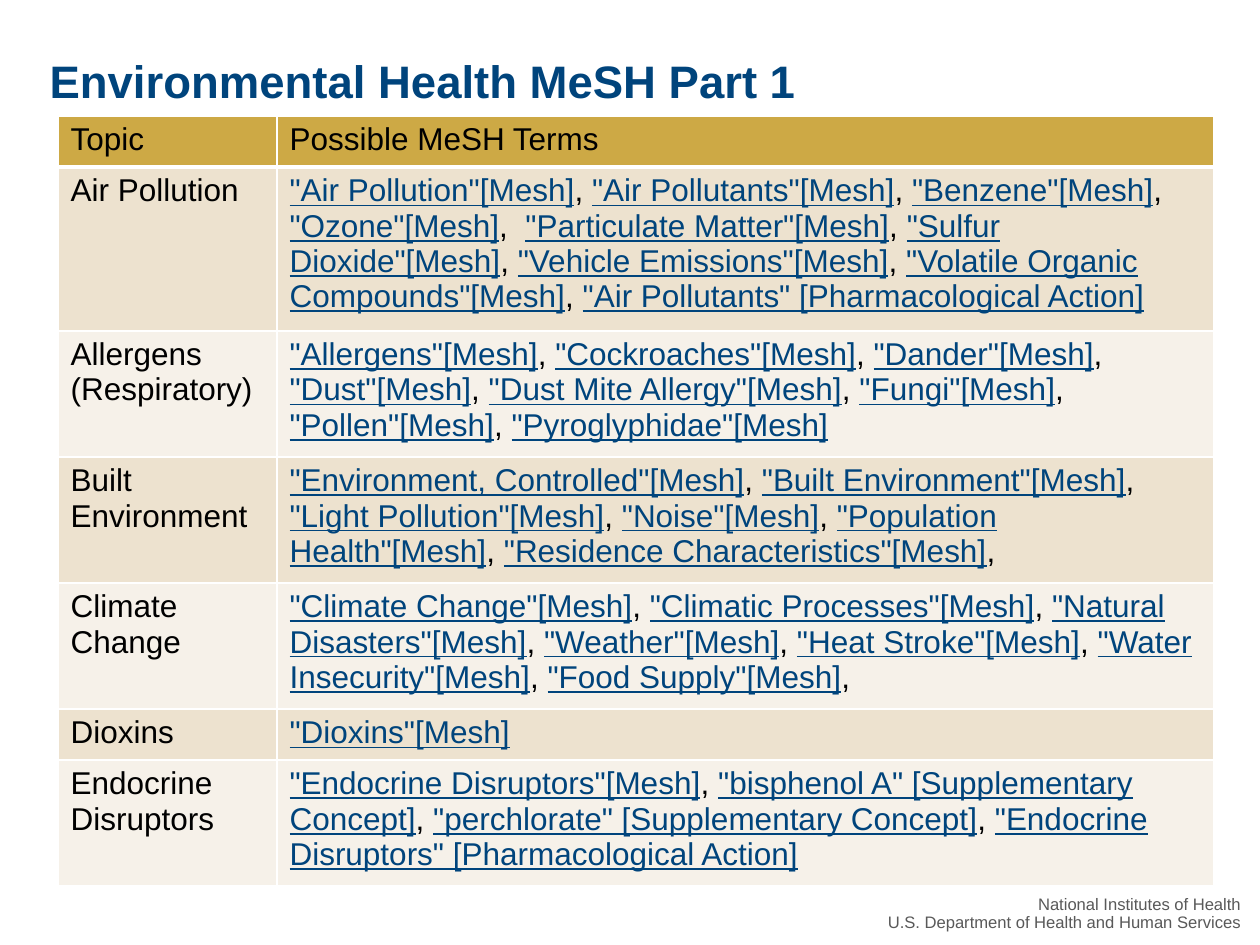
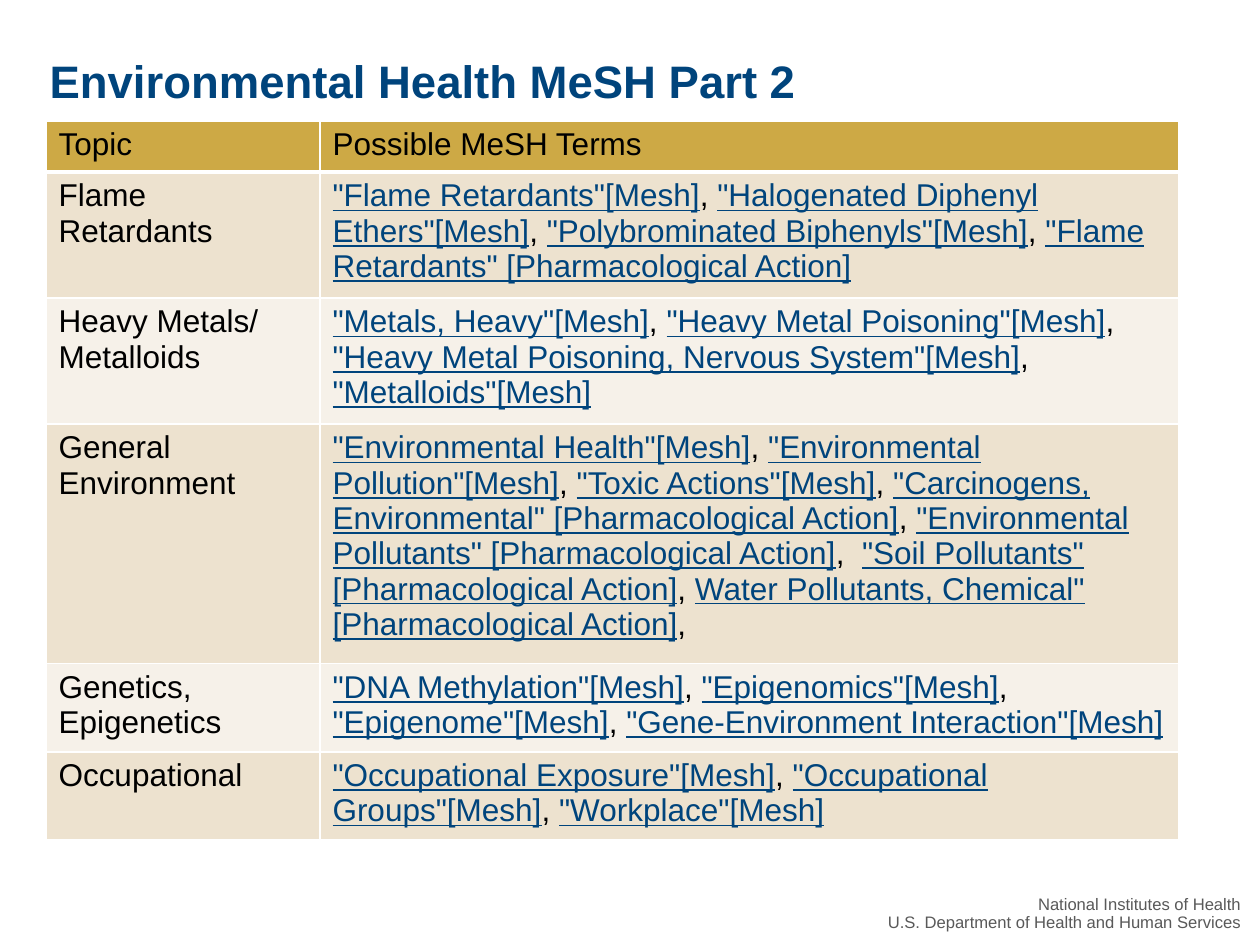
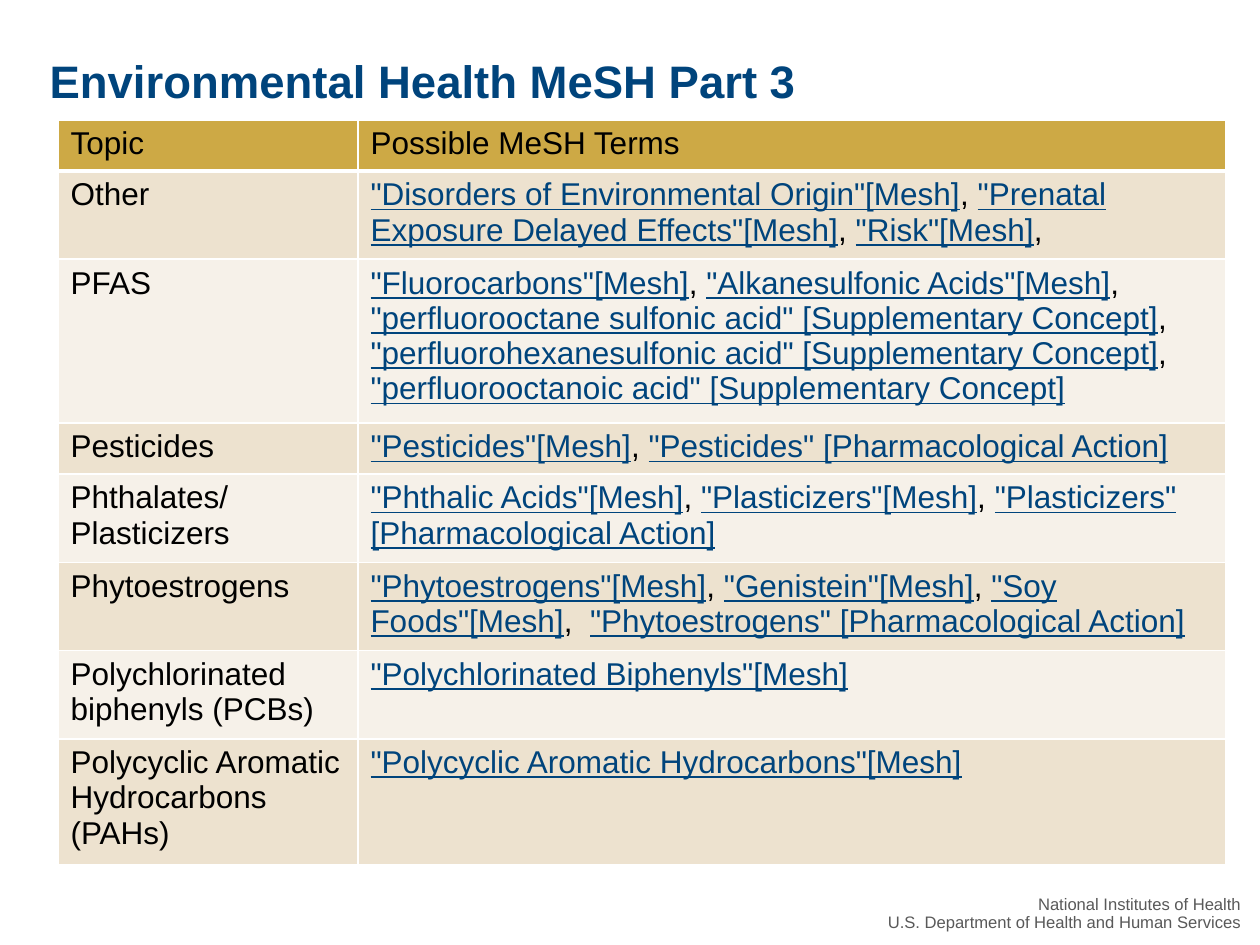
from dataclasses import dataclass

from lxml.etree import SubElement
from pptx import Presentation
from pptx.dml.color import RGBColor
from pptx.enum.text import MSO_ANCHOR, MSO_AUTO_SIZE, PP_ALIGN
from pptx.oxml.ns import qn
from pptx.util import Emu, Pt


@dataclass(frozen=True)
class Theme:
    """Colours, type sizes and line widths shared by the slides."""

    font: str = "Arial"
    navy: str = "00447C"
    black: str = "000000"
    grey: str = "595959"
    white: str = "FFFFFF"
    gold: str = "CDA945"
    bands: tuple = ("EDE2CF", "F6F1E9")
    title_size: float = 26
    table_size: float = 18
    footer_size: float = 9.5
    rule: float = 1
    header_rule: float = 3


THEME = Theme()
PIXELS_PER_INCH = 126
ROW_HEIGHT = 51
TITLE_BOX = (37, 44, 1134, 72)
FOOTER_BOX = (872, 890, 388, 55)
FOOTER = (
    "National Institutes of Health",
    "U.S. Department of Health and Human Services",
)
HEADINGS = ("Topic", "Possible MeSH Terms")

TOPICS_1 = (
    ("Air Pollution",
     '"Air Pollution"[Mesh], "Air Pollutants"[Mesh], "Benzene"[Mesh],  '
     '"Ozone"[Mesh],  "Particulate Matter"[Mesh], "Sulfur Dioxide"[Mesh], '
     '"Vehicle Emissions"[Mesh], "Volatile Organic Compounds"[Mesh], '
     '"Air Pollutants" [Pharmacological Action]'),
    ("Allergens (Respiratory)",
     '"Allergens"[Mesh], "Cockroaches"[Mesh], "Dander"[Mesh], "Dust"[Mesh], '
     '"Dust Mite Allergy"[Mesh], "Fungi"[Mesh], "Pollen"[Mesh], '
     '"Pyroglyphidae"[Mesh]'),
    ("Built Environment",
     '"Environment, Controlled"[Mesh], "Built Environment"[Mesh], '
     '"Light Pollution"[Mesh], "Noise"[Mesh], "Population Health"[Mesh], '
     '"Residence Characteristics"[Mesh],'),
    ("Climate Change",
     '"Climate Change"[Mesh], "Climatic Processes"[Mesh], '
     '"Natural Disasters"[Mesh], "Weather"[Mesh], "Heat Stroke"[Mesh], '
     '"Water Insecurity"[Mesh], "Food Supply"[Mesh],'),
    ("Dioxins", '"Dioxins"[Mesh]'),
    ("Endocrine Disruptors",
     '"Endocrine Disruptors"[Mesh], "bisphenol A" [Supplementary Concept], '
     '"perchlorate" [Supplementary Concept], '
     '"Endocrine Disruptors" [Pharmacological Action]'),
)

TOPICS_2 = (
    ("Flame Retardants",
     '"Flame Retardants"[Mesh], "Halogenated Diphenyl Ethers"[Mesh], '
     '"Polybrominated Biphenyls"[Mesh], '
     '"Flame Retardants" [Pharmacological Action]'),
    ("Heavy Metals/\nMetalloids",
     '"Metals, Heavy"[Mesh], "Heavy Metal Poisoning"[Mesh], '
     '"Heavy Metal Poisoning, Nervous System"[Mesh], "Metalloids"[Mesh]'),
    ("General Environment",
     '"Environmental Health"[Mesh], "Environmental Pollution"[Mesh], '
     '"Toxic Actions"[Mesh], '
     '"Carcinogens, Environmental" [Pharmacological Action], '
     '"Environmental Pollutants" [Pharmacological Action],  '
     '"Soil Pollutants" [Pharmacological Action], '
     'Water Pollutants, Chemical" [Pharmacological Action],'),
    ("Genetics, Epigenetics",
     '"DNA Methylation"[Mesh], "Epigenomics"[Mesh], "Epigenome"[Mesh], '
     '"Gene-Environment Interaction"[Mesh]'),
    ("Occupational",
     '"Occupational Exposure"[Mesh], "Occupational Groups"[Mesh], '
     '"Workplace"[Mesh]'),
)

TOPICS_3 = (
    ("Other",
     '"Disorders of Environmental Origin"[Mesh], '
     '"Prenatal Exposure Delayed Effects"[Mesh], "Risk"[Mesh],'),
    ("PFAS",
     '"Fluorocarbons"[Mesh], "Alkanesulfonic Acids"[Mesh], '
     '"perfluorooctane sulfonic acid" [Supplementary Concept], '
     '"perfluorohexanesulfonic acid" [Supplementary Concept], '
     '"perfluorooctanoic acid" [Supplementary Concept]'),
    ("Pesticides",
     '"Pesticides"[Mesh], "Pesticides" [Pharmacological Action]'),
    ("Phthalates/\nPlasticizers",
     '"Phthalic Acids"[Mesh], "Plasticizers"[Mesh], '
     '"Plasticizers" [Pharmacological Action]'),
    ("Phytoestrogens",
     '"Phytoestrogens"[Mesh], "Genistein"[Mesh], "Soy Foods"[Mesh],  '
     '"Phytoestrogens" [Pharmacological Action]'),
    ("Polychlorinated biphenyls (PCBs)", '"Polychlorinated Biphenyls"[Mesh]'),
    ("Polycyclic Aromatic Hydrocarbons (PAHs)",
     '"Polycyclic Aromatic Hydrocarbons"[Mesh]'),
)

PAGES = (
    ((58, 116), (219, 937), TOPICS_1),
    ((46, 121), (274, 859), TOPICS_2),
    ((58, 120), (300, 868), TOPICS_3),
)


def px(length):
    """Turn a length in pixels into EMU."""
    return Emu(round(length * 914400 / PIXELS_PER_INCH))


def assign(target, values):
    """Set each attribute of the target from a dict."""
    for name, value in values.items():
        setattr(target, name, value)


def add_span(para, text, size, color, **extra):
    """Append a formatted run to a paragraph."""
    span = para.add_run()
    span.text = text
    assign(span.font, {"name": THEME.font, "size": Pt(size), "bold": False, **extra})
    span.font.color.rgb = RGBColor.from_string(color)


def add_lines(frame, lines, size, color, layout=None, **extra):
    """Write one paragraph for each line of text."""
    for index, line in enumerate(lines):
        para = frame.add_paragraph() if index else frame.paragraphs[0]
        assign(para, layout or {})
        add_span(para, line, size, color, **extra)


def add_terms(para, text):
    """Write search terms as underlined spans with plain gaps between them."""
    for piece in text.split("]"):
        term = piece.lstrip(", ")
        gap = piece[:len(piece) - len(term)]
        if gap:
            add_span(para, gap, THEME.table_size, THEME.black)
        if term:
            add_span(para, term + "]", THEME.table_size, THEME.navy, underline=True)


def style_cell(cell, color, bottom_rule):
    """Give a cell white borders and a solid fill."""
    properties = cell._tc.get_or_add_tcPr()
    for side in "LRTB":
        width = bottom_rule if side == "B" else THEME.rule
        line = SubElement(properties, qn(f"a:ln{side}"), w=str(Pt(width)))
        fill = SubElement(line, qn("a:solidFill"))
        SubElement(fill, qn("a:srgbClr"), val=THEME.white)
    cell.fill.solid()
    cell.fill.fore_color.rgb = RGBColor.from_string(color)


def add_title(page, text):
    """Place and format the title placeholder."""
    box = page.shapes.title
    assign(box, dict(zip(("left", "top", "width", "height"), map(px, TITLE_BOX))))
    assign(box.text_frame, {
        "word_wrap": True,
        "auto_size": MSO_AUTO_SIZE.NONE,
        "vertical_anchor": MSO_ANCHOR.MIDDLE,
    })
    add_lines(box.text_frame, [text], THEME.title_size, THEME.navy,
              {"alignment": PP_ALIGN.LEFT}, bold=True)


def add_footer(page):
    """Add the agency footer at the lower right."""
    frame = page.shapes.add_textbox(*map(px, FOOTER_BOX)).text_frame
    assign(frame, {
        "word_wrap": False,
        "auto_size": MSO_AUTO_SIZE.SHAPE_TO_FIT_TEXT,
        "vertical_anchor": MSO_ANCHOR.BOTTOM,
        "margin_right": px(19),
        "margin_bottom": px(13),
    })
    add_lines(frame, FOOTER, THEME.footer_size, THEME.grey,
              {"alignment": PP_ALIGN.RIGHT, "line_spacing": 0.9})


def add_topic_table(page, corner, widths, topics):
    """Add the table of topics and their search terms."""
    count = len(topics) + 1
    table = page.shapes.add_table(
        count, len(widths), *map(px, (*corner, sum(widths), count * ROW_HEIGHT))
    ).table
    table.horz_banding = False
    for column, width in zip(table.columns, widths):
        column.width = px(width)
    for cell, heading in zip(table.rows[0].cells, HEADINGS):
        style_cell(cell, THEME.gold, THEME.header_rule)
        add_lines(cell.text_frame, [heading], THEME.table_size, THEME.black)
    for index, (topic, terms) in enumerate(topics):
        topic_cell, terms_cell = table.rows[index + 1].cells
        for cell in (topic_cell, terms_cell):
            style_cell(cell, THEME.bands[index % 2], THEME.rule)
        add_lines(topic_cell.text_frame, topic.split("\n"), THEME.table_size, THEME.black)
        add_terms(terms_cell.text_frame.paragraphs[0], terms)


def main():
    """Build and save the deck."""
    deck = Presentation()
    assign(deck, {"slide_width": px(1260), "slide_height": px(945)})
    for number, (corner, widths, topics) in enumerate(PAGES, 1):
        page = deck.slides.add_slide(deck.slide_layouts[5])
        add_footer(page)
        add_title(page, f"Environmental Health MeSH Part {number}")
        add_topic_table(page, corner, widths, topics)
    deck.save("out.pptx")


if __name__ == "__main__":
    main()
